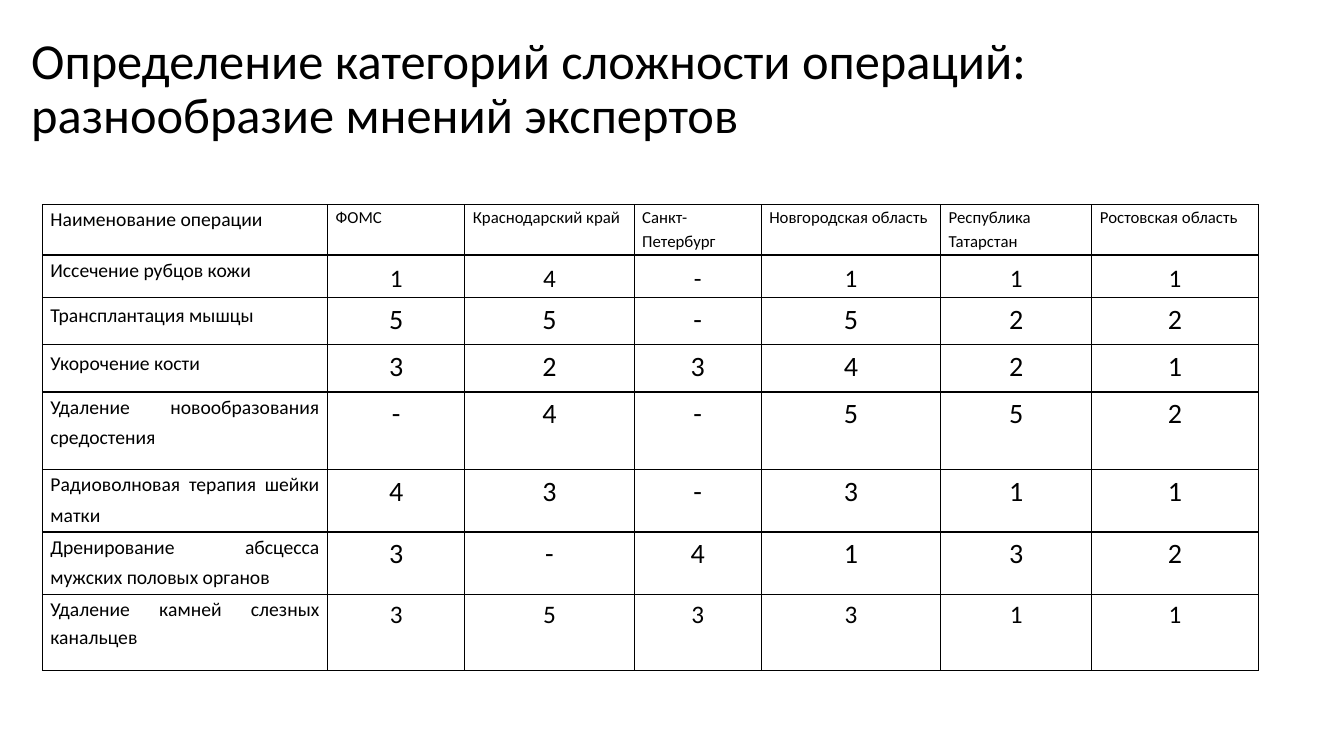
from lxml.etree import SubElement
from pptx import Presentation
from pptx.dml.color import RGBColor
from pptx.enum.text import MSO_ANCHOR, MSO_AUTO_SIZE, PP_ALIGN
from pptx.oxml.ns import qn
from pptx.util import Inches, Pt

HEADS = ["Наименование операции", "ФОМС", "Краснодарский край", "Санкт-Петербург",
         "Новгородская область", "Республика Татарстан", "Ростовская область"]
ROWS = [
    ("Иссечение рубцов кожи", "14-111", 18),
    ("Трансплантация мышцы", "55-522", 20),
    ("Укорочение кости", "323421", 20),
    ("Удаление новообразования средостения", "-4-552", 20),
    ("Радиоволновая терапия шейки матки", "43-311", 20),
    ("Дренирование абсцесса мужских половых органов", "3-4132", 20),
    ("Удаление камней слезных канальцев", "353311", 18),
]
WIDTHS = [2.83, 1.36, 1.68, 1.26, 1.78, 1.5, 1.65]
HEIGHTS = [0.5, 0.42, 0.47, 0.47, 0.77, 0.62, 0.62, 0.75]


def color(code):
    return RGBColor.from_string(code)


class Deck:
    font = "Calibri"
    ink = "000000"

    def __init__(self):
        self.prs = Presentation()
        self.prs.slide_width = Inches(13.33)
        self.prs.slide_height = Inches(7.5)
        self.slide = self.prs.slides.add_slide(self.prs.slide_layouts[5])

    def text(self, para, runs, align, space):
        para.alignment = align
        para.line_spacing = space
        for words, size in runs:
            run = para.add_run()
            run.text = words
            run.font.size = Pt(size)
            run.font.name = self.font
            run.font.color.rgb = color(self.ink)

    def title(self, words, left, top, width, height):
        box = self.slide.shapes.title
        box.left, box.top = Inches(left), Inches(top)
        box.width, box.height = Inches(width), Inches(height)
        frame = box.text_frame
        frame.word_wrap = True
        frame.auto_size = MSO_AUTO_SIZE.NONE
        frame.vertical_anchor = MSO_ANCHOR.MIDDLE
        self.text(frame.paragraphs[0], [(words, 36)], PP_ALIGN.LEFT, 0.9)

    def table(self, left, top, widths, heights):
        grid = self.slide.shapes.add_table(
            len(heights), len(widths), Inches(left), Inches(top),
            Inches(sum(widths)), Inches(sum(heights))).table
        grid.first_row = grid.horz_banding = False
        for col, width in zip(grid.columns, widths):
            col.width = Inches(width)
        for row, height in zip(grid.rows, heights):
            row.height = Inches(height)
        return grid

    def cell(self, cell, runs, align, anchor=MSO_ANCHOR.TOP):
        cell.margin_left = cell.margin_right = Inches(0.08)
        cell.margin_top = cell.margin_bottom = 0
        cell.vertical_anchor = anchor
        self.text(cell.text_frame.paragraphs[0], runs, align, 1.15)
        props = cell._tc.get_or_add_tcPr()
        for side in ("lnL", "lnR", "lnT", "lnB"):
            line = SubElement(props, qn(f"a:{side}"), w=str(Pt(1)))
            fill = SubElement(line, qn("a:solidFill"))
            SubElement(fill, qn("a:srgbClr"), val=self.ink)
        cell.fill.background()


def main():
    deck = Deck()
    deck.title("Определение категорий сложности операций: разнообразие мнений экспертов",
               0.21, 0.39, 12.67, 1.01)
    grid = deck.table(0.42, 2.03, WIDTHS, HEIGHTS)
    for c, head in enumerate(HEADS):
        deck.cell(grid.cell(0, c), [(head, 12 if c else 14)], PP_ALIGN.JUSTIFY)
    for r, (name, marks, size) in enumerate(ROWS, 1):
        runs = [(name, 14)]
        if size == 20:
            runs.append((" ", 16))
        deck.cell(grid.cell(r, 0), runs, PP_ALIGN.JUSTIFY)
        anchor = MSO_ANCHOR.MIDDLE if r == 1 else MSO_ANCHOR.TOP
        for c, mark in enumerate(marks, 1):
            deck.cell(grid.cell(r, c), [(mark, size)], PP_ALIGN.CENTER, anchor)
    deck.prs.save("out.pptx")


if __name__ == "__main__":
    main()
